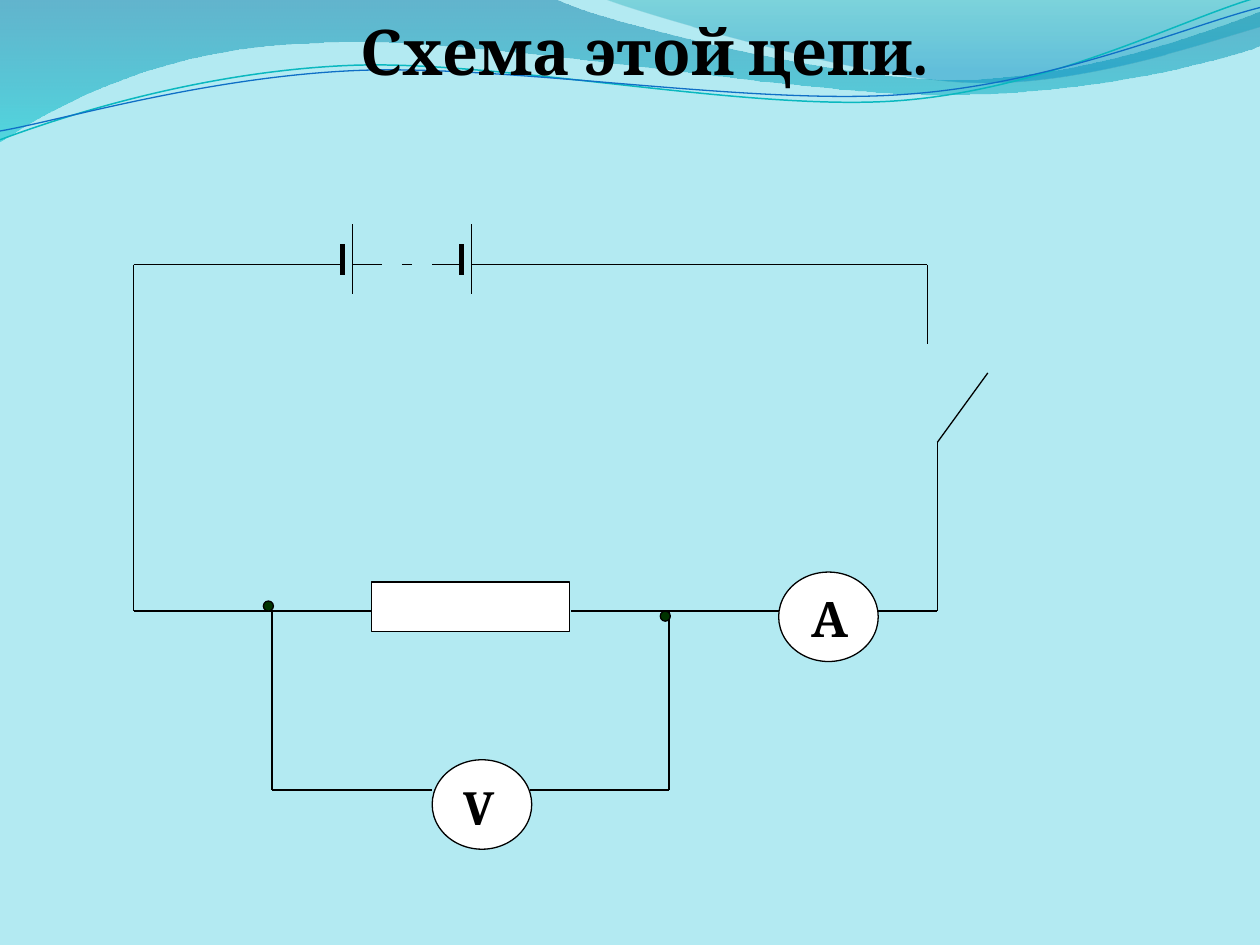
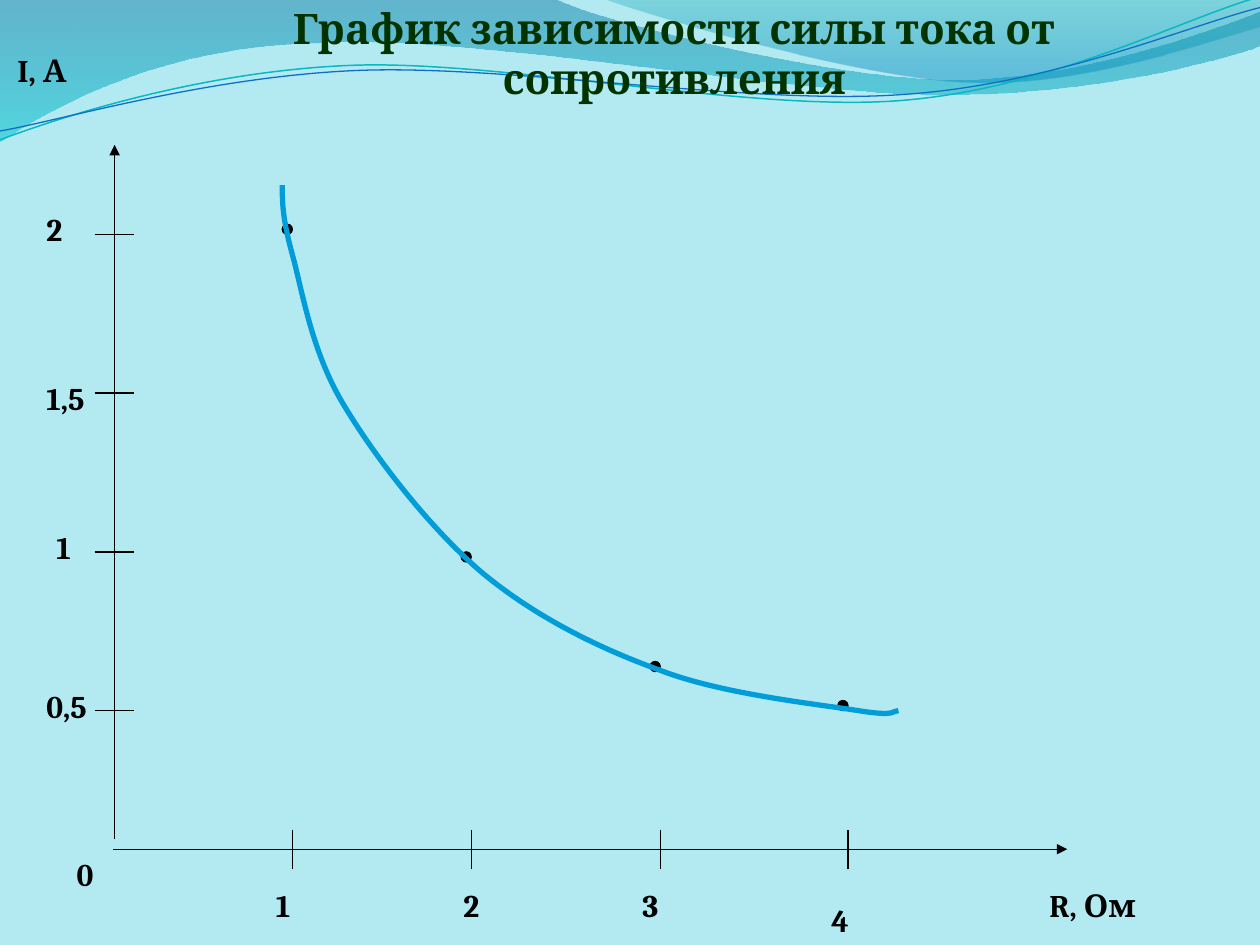
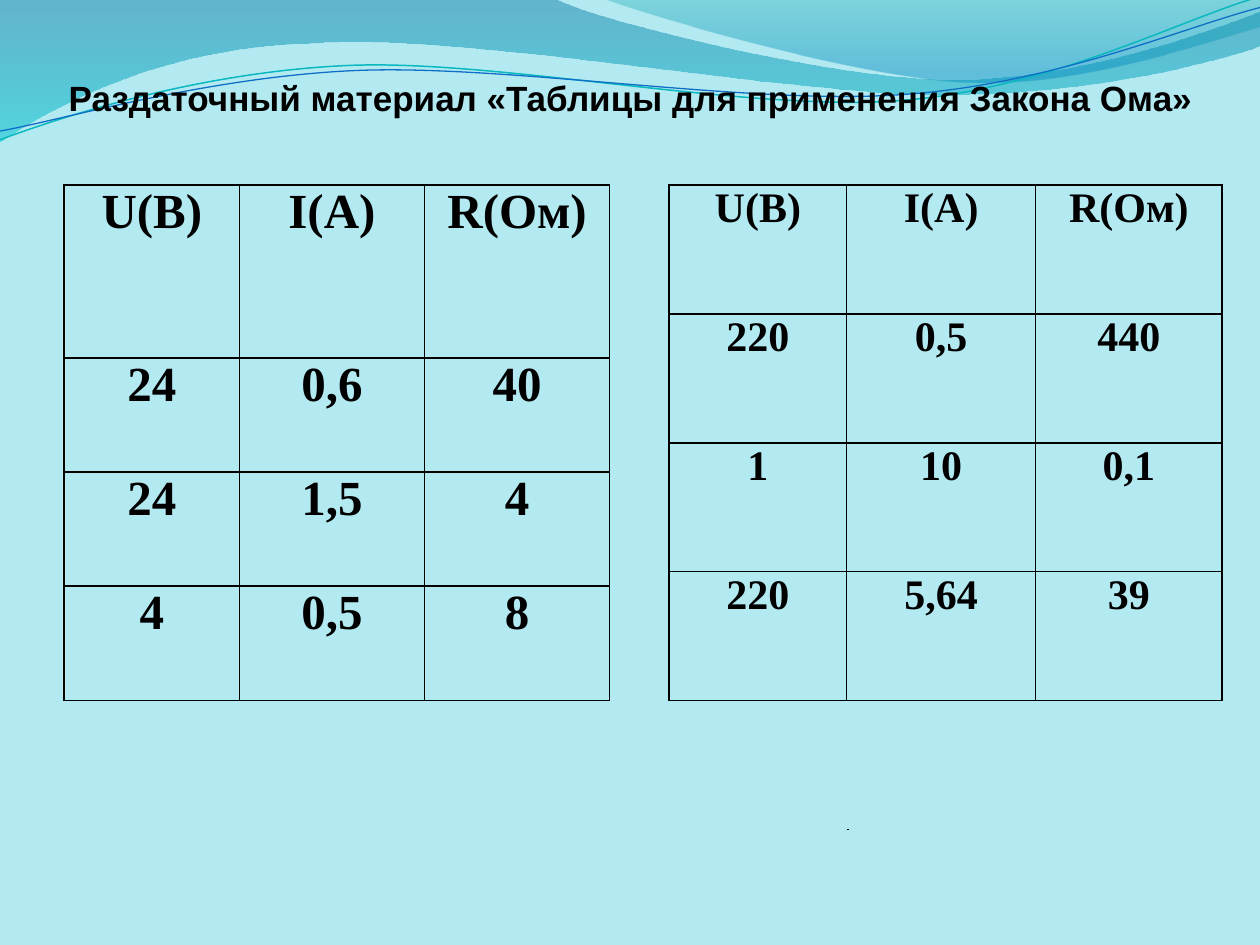
"""Builds three slides on Ohm's law: a circuit, a graph and two tables."""
import lxml.etree
import pptx
import pptx.dml.color
import pptx.enum.shapes
import pptx.enum.text
import pptx.oxml.ns
import pptx.util

Inches = pptx.util.Inches
Pt = pptx.util.Pt
qn = pptx.oxml.ns.qn
color = pptx.dml.color.RGBColor.from_string
OVAL = pptx.enum.shapes.MSO_SHAPE.OVAL
RECTANGLE = pptx.enum.shapes.MSO_SHAPE.RECTANGLE
CENTER = pptx.enum.text.PP_ALIGN.CENTER
LEFT = pptx.enum.text.PP_ALIGN.LEFT

BLACK, WHITE, GREEN, BACKGROUND = "000000", "FFFFFF", "003300", "B3EAF2"
THIN, THICK = 0.75, 3


def add_curve(page, start, segments, closed=False):
    """Draws straight (2 numbers) and cubic (6 numbers) segments from a start point."""
    builder = page.shapes.build_freeform(*map(Inches, start), scale=1.0)
    for segment in segments:
        lengths = list(map(Inches, segment))
        builder.add_line_segments(list(zip(lengths[::2], lengths[1::2])), close=False)
    if closed:
        builder.add_line_segments([tuple(map(Inches, start))], close=True)
    shape = builder.convert_to_shape()
    shape.shadow.inherit = False
    strokes = iter(list(shape.element.iter(qn("a:lnTo"))))
    for segment in segments:
        first = next(strokes)
        if len(segment) == 6:
            first.tag = qn("a:cubicBezTo")
            for _ in range(2):
                stroke = next(strokes)
                first.append(stroke[0])
                stroke.getparent().remove(stroke)
    return shape


def add_text(page, text, place, size, font="Cambria", ink=BLACK, align=LEFT):
    """Adds a bold text box at left, top, width, height."""
    box = page.shapes.add_textbox(*map(Inches, place))
    box.text_frame.word_wrap = True
    box.text_frame.auto_size = pptx.enum.text.MSO_AUTO_SIZE.SHAPE_TO_FIT_TEXT
    box.text_frame.text = text
    para = box.text_frame.paragraphs[0]
    para.alignment = align
    span = para.runs[0]
    span.font.size, span.font.name, span.font.bold = Pt(size), font, True
    span.font.color.rgb = color(ink)
    return box


deck = pptx.Presentation()
deck.slide_width, deck.slide_height = Inches(10), Inches(7.5)
layout = deck.slide_layouts[6]
layout.background.fill.solid()
layout.background.fill.fore_color.rgb = color(BACKGROUND)
circuit, graph, tables = [deck.slides.add_slide(layout) for _ in range(3)]

bands = [
    ((0, 0), [(4.4, -0.01), (4.76, 0.17, 6.64, 0.63, 7.58, 0.63),
              (8.53, 0.63, 9.58, 0.26, 10, 0.09), (10.01, 0.36),
              (9.83, 0.44, 8.7, 0.76, 7.46, 0.75), (6.22, 0.75, 3.82, 0.28, 2.57, 0.34),
              (1.29, 0.36, 0.46, 0.83, -0.01, 1.13)],
     [(0, "0074A1", 45), (1, "00C6CF", 55)]),
    ((4.79, -0.01), [(5.09, 0.11, 6.82, 0.62, 7.69, 0.65),
                     (8.56, 0.69, 9.61, 0.32, 10, 0.21), (10, 0)],
     [(0, "00A1A9", 30), (0.8, "008BBF", 45)]),
]
for start, segments, stops in bands:
    band = add_curve(circuit, start, segments, closed=True)
    band.line.fill.background()
    band.fill.gradient()
    band.fill.gradient_angle = 270
    for stop, (position, ink, _) in zip(band.fill.gradient_stops, stops):
        stop.position, stop.color.rgb = position, color(ink)
    inks = band.element.find(qn("p:spPr")).iter(qn("a:srgbClr"))
    for ink, (_, _, opacity) in zip(inks, stops):
        lxml.etree.SubElement(ink, qn("a:alpha"), val=str(opacity * 1000))
    layout.shapes.element.append(band.element)

waves = [
    ((0, 1.11), [(0.48, 0.93, 1.58, 0.57, 2.77, 0.52), (3.95, 0.47, 5.93, 0.89, 7.13, 0.8),
                 (8.33, 0.71, 9.38, 0.15, 9.98, -0.02)], "0AB8BF", 0.85),
    ((0, 1.04), [(0.47, 0.96, 1.64, 0.61, 2.83, 0.56), (4.03, 0.51, 5.97, 0.84, 7.17, 0.75),
                 (8.36, 0.67, 9.41, 0.21, 10, 0.06)], "0F6FC6", 0.75),
]
for start, segments, ink, width in waves:
    wave = add_curve(circuit, start, segments)
    wave.fill.background()
    wave.line.color.rgb, wave.line.width = color(ink), Pt(width)
    layout.shapes.element.append(wave.element)

x_ticks = [2.32, 3.74, 5.24, 6.73]
y_ticks = [5.64 - 1.26 * step for step in range(4)]
wires = [
    [(2.72, 2.1), (1.06, 2.1), (1.06, 4.85), (2.95, 4.85)],
    [(4.53, 4.85), (5.94, 4.85), (6.18, 4.85)],
    [(2.16, 4.85), (2.16, 6.27), (3.43, 6.27)],
    [(5.31, 4.85), (5.31, 6.27), (4.21, 6.27)],
    [(6.97, 4.85), (7.44, 4.85), (7.44, 3.51), (7.84, 2.96)],
    [(2.8, 2.1), (3.03, 2.1)],
    [(3.19, 2.1), (3.27, 2.1)],
    [(3.43, 2.1), (3.66, 2.1)],
    [(3.74, 2.1), (7.36, 2.1), (7.36, 2.18), (7.36, 2.73)],
]
lines = [(circuit, *sorted(ends), THIN, False)
         for wire in wires for ends in zip(wire, wire[1:])]
for x in (2.72, 3.66):
    lines.append((circuit, (x, 1.94), (x, 2.18), THICK, False))
    lines.append((circuit, (x + 0.08, 1.78), (x + 0.08, 2.33), THIN, False))
lines.append((graph, (0.91, 6.66), (0.91, 1.15), THIN, True))
lines.append((graph, (0.9, 6.74), (8.47, 6.74), THIN, True))
lines += [(graph, (x, 6.59), (x, 6.9), THIN, False) for x in x_ticks]
lines += [(graph, (0.75, y), (1.06, y), THIN, False) for y in y_ticks]
lines.append((tables, (6.73, 6.59), (6.73, 6.58), THIN, False))
for page, start, end, width, arrow in lines:
    line = page.shapes.add_connector(pptx.enum.shapes.MSO_CONNECTOR.STRAIGHT,
                                     *map(Inches, start + end))
    line.line.color.rgb, line.line.width = color(BLACK), Pt(width)
    properties = line.element.find(qn("p:spPr"))
    if arrow:
        lxml.etree.SubElement(properties.find(qn("a:ln")), qn("a:tailEnd"), type="triangle")
    lxml.etree.SubElement(properties, qn("a:effectLst"))

symbols = [
    (circuit, RECTANGLE, (2.95, 4.62, 1.57, 0.39), WHITE),
    (circuit, OVAL, (3.43, 6.03, 0.79, 0.71), WHITE),
    (circuit, OVAL, (6.18, 4.54, 0.79, 0.71), WHITE),
    (circuit, OVAL, (2.09, 4.77, 0.08, 0.08), GREEN),
    (circuit, OVAL, (5.24, 4.85, 0.08, 0.08), GREEN),
]
symbols += [(graph, OVAL, (x - 0.08, y, 0.08, 0.08), BLACK)
            for x, y in zip(x_ticks, (1.78, 4.38, 5.25, 5.56))]
for page, kind, place, ink in symbols:
    symbol = page.shapes.add_shape(kind, *map(Inches, place))
    symbol.shadow.inherit = False
    symbol.fill.solid()
    symbol.fill.fore_color.rgb = color(ink)
    symbol.line.color.rgb, symbol.line.width = color(BLACK), Pt(THIN)

add_text(circuit, "Схема этой цепи.", (1.53, 0.05, 7.17, 0.7), 36, align=CENTER)
add_text(circuit, "V", (3.58, 6.11, 0.39, 0.57), 28)
add_text(circuit, "А", (6.34, 4.62, 0.47, 0.57), 28)

hyperbola = add_curve(graph, (2.24, 1.47), [
    (2.24, 1.6, 2.24, 1.73, 2.32, 2.02), (2.4, 2.31, 2.47, 2.78, 2.72, 3.2),
    (2.97, 3.62, 3.4, 4.18, 3.82, 4.54), (4.24, 4.89, 4.74, 5.14, 5.24, 5.32),
    (5.73, 5.51, 6.5, 5.59, 6.81, 5.64), (7.13, 5.69, 7.07, 5.64, 7.13, 5.64)])
hyperbola.fill.background()
hyperbola.line.color.rgb, hyperbola.line.width = color("009DD9"), Pt(THICK)

axis_labels = [
    ("0", 0.51, 6.74, 0.31), ("1", 2.09, 6.98, 0.39), ("2", 3.58, 6.98, 0.39),
    ("3", 5, 6.98, 0.55), ("4", 6.5, 7.1, 0.55), ("0,5", 0.27, 5.4, 0.83),
    ("1", 0.35, 4.14, 0.67), ("1,5", 0.27, 2.96, 0.98), ("2", 0.27, 1.62, 0.67),
    ("R, Ом", 8.23, 6.98, 1.42), ("I, А", 0.04, 0.36, 0.71),
]
for text, left, top, width in axis_labels:
    add_text(graph, text, (left, top, width, 0.4), 18)
add_text(graph, "График зависимости силы тока от сопротивления",
         (1.61, -0.03, 7.48, 0.9), 24, ink=GREEN, align=CENTER)

header = ["U(В)", "I(А)", "R(Ом)"]
table_height, header_height = 4.09, 1.37
exercises = [
    (0.51, [1.39, 1.47, 1.47], header_height, 28,
     [header, ["24", "0,6", "40"], ["24", "1,5", "4"], ["4", "0,5", "8"]]),
    (5.31, [1.41, 1.5, 1.48], table_height / 4, 24,
     [header, ["220", "0,5", "440"], ["1", "10", "0,1"], ["220", "5,64", "39"]]),
]
for left, widths, top_height, size, values in exercises:
    heights = [top_height] + [(table_height - top_height) / 3] * 3
    table = tables.shapes.add_table(len(values), len(widths), Inches(left), Inches(1.47),
                                    Inches(sum(widths)), Inches(table_height)).table
    table.first_row = table.horz_banding = False
    for column, width in zip(table.columns, widths):
        column.width = Inches(width)
    for row, height, texts in zip(table.rows, heights, values):
        row.height = Inches(height)
        for cell, text in zip(row.cells, texts):
            cell.text_frame.text = text
            cell.margin_left = cell.margin_right = Inches(0.07)
            cell.margin_top = cell.margin_bottom = 0
            para = cell.text_frame.paragraphs[0]
            para.alignment = CENTER
            font = para.runs[0].font
            font.size, font.name, font.bold = Pt(size), "Times New Roman", True
            font.color.rgb = color(BLACK)
            properties = cell._tc.get_or_add_tcPr()
            for side in ("a:lnL", "a:lnR", "a:lnT", "a:lnB"):
                border = lxml.etree.SubElement(properties, qn(side), w=str(Pt(1)))
                solid = lxml.etree.SubElement(border, qn("a:solidFill"))
                lxml.etree.SubElement(solid, qn("a:srgbClr"), val=BLACK)
            cell.fill.background()

heading = add_text(tables, "Раздаточный материал «Таблицы для применения Закона Ома»",
                   (0.41, 0.55, 9.19, 0.44), 20, font="Arial", align=CENTER)
heading.text_frame.vertical_anchor = pptx.enum.text.MSO_ANCHOR.MIDDLE

deck.save("out.pptx")
